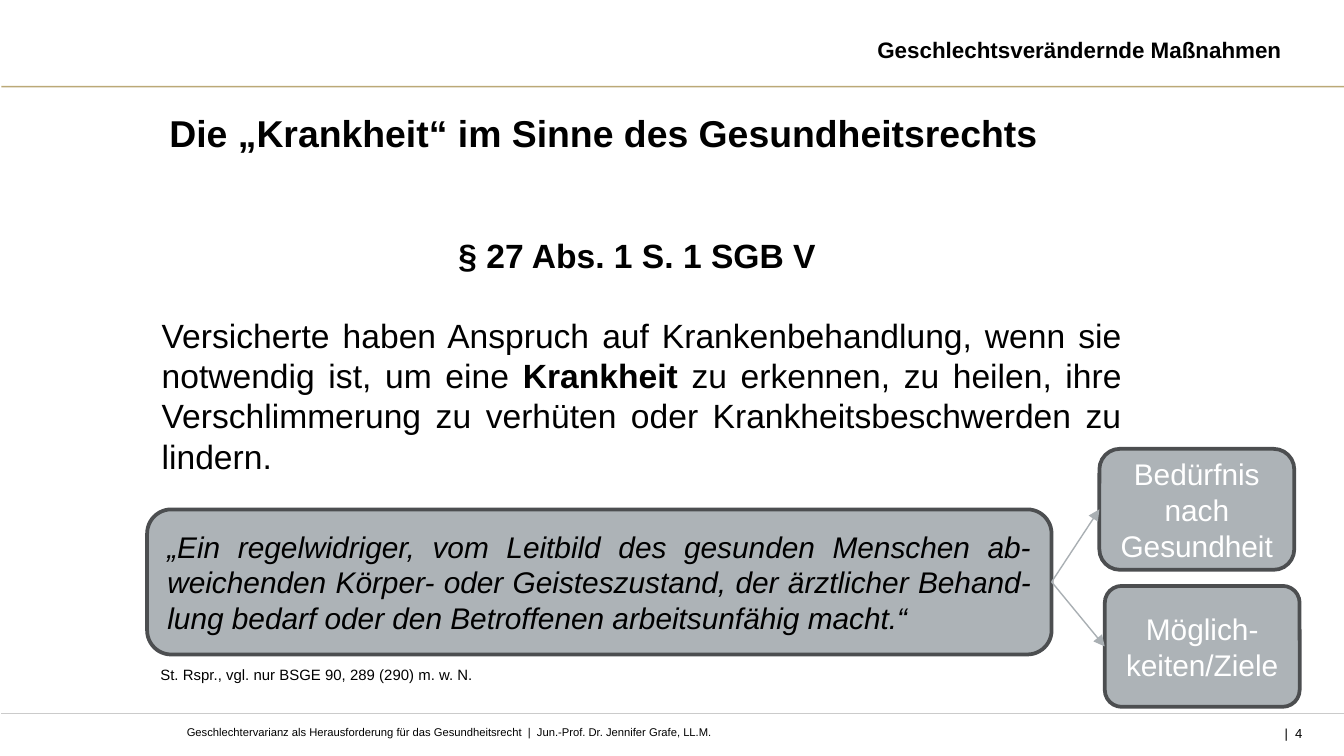
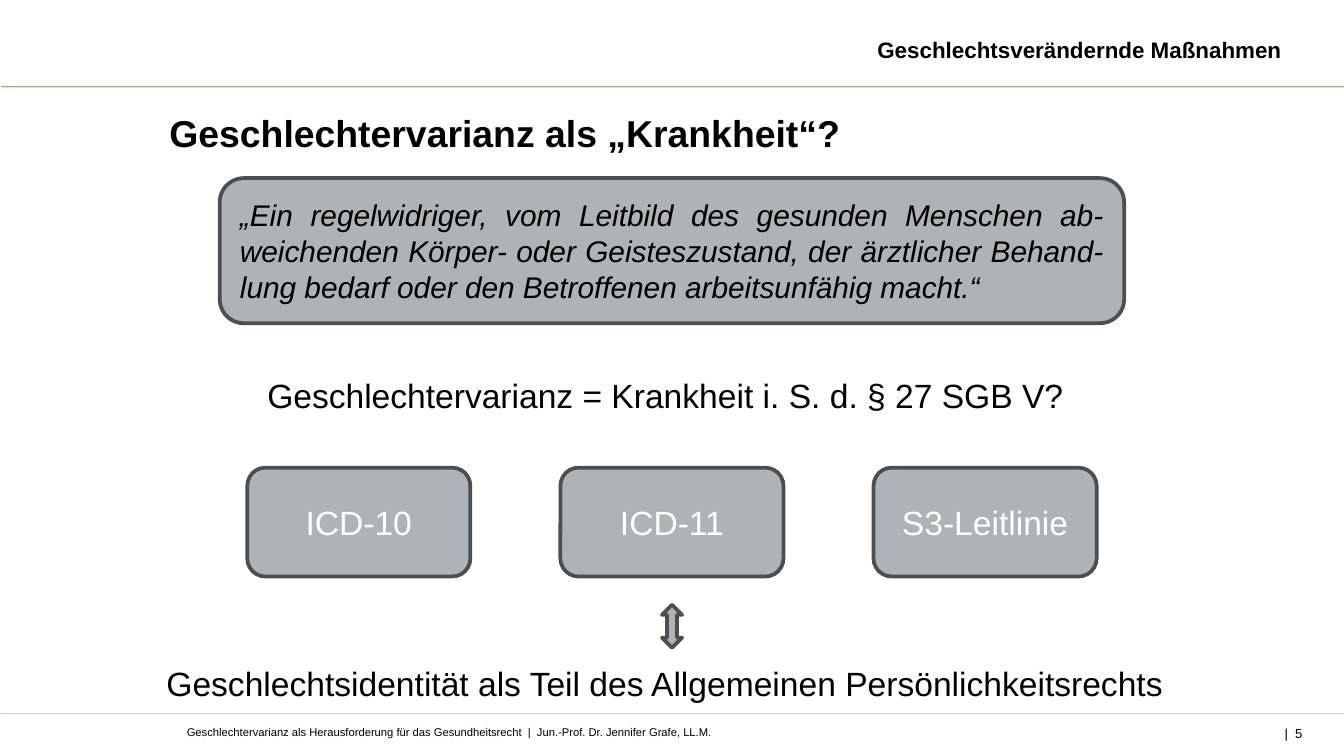
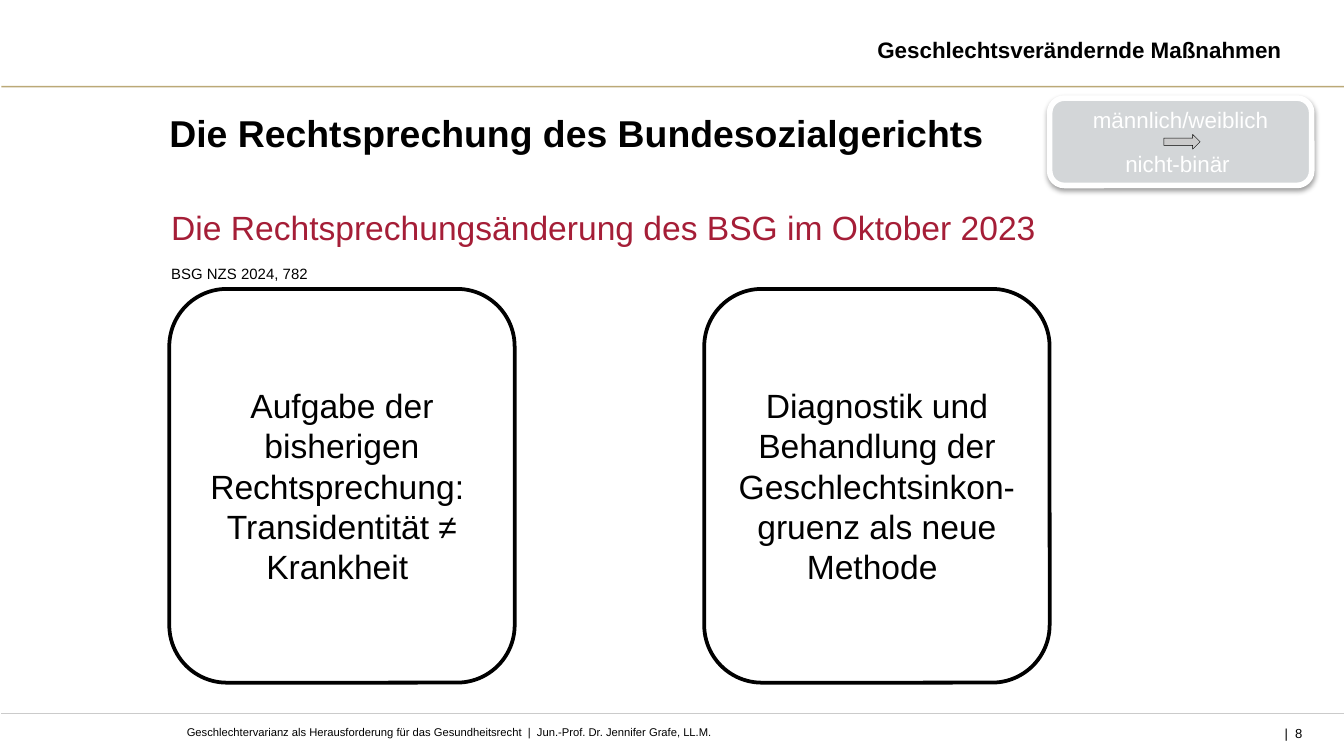
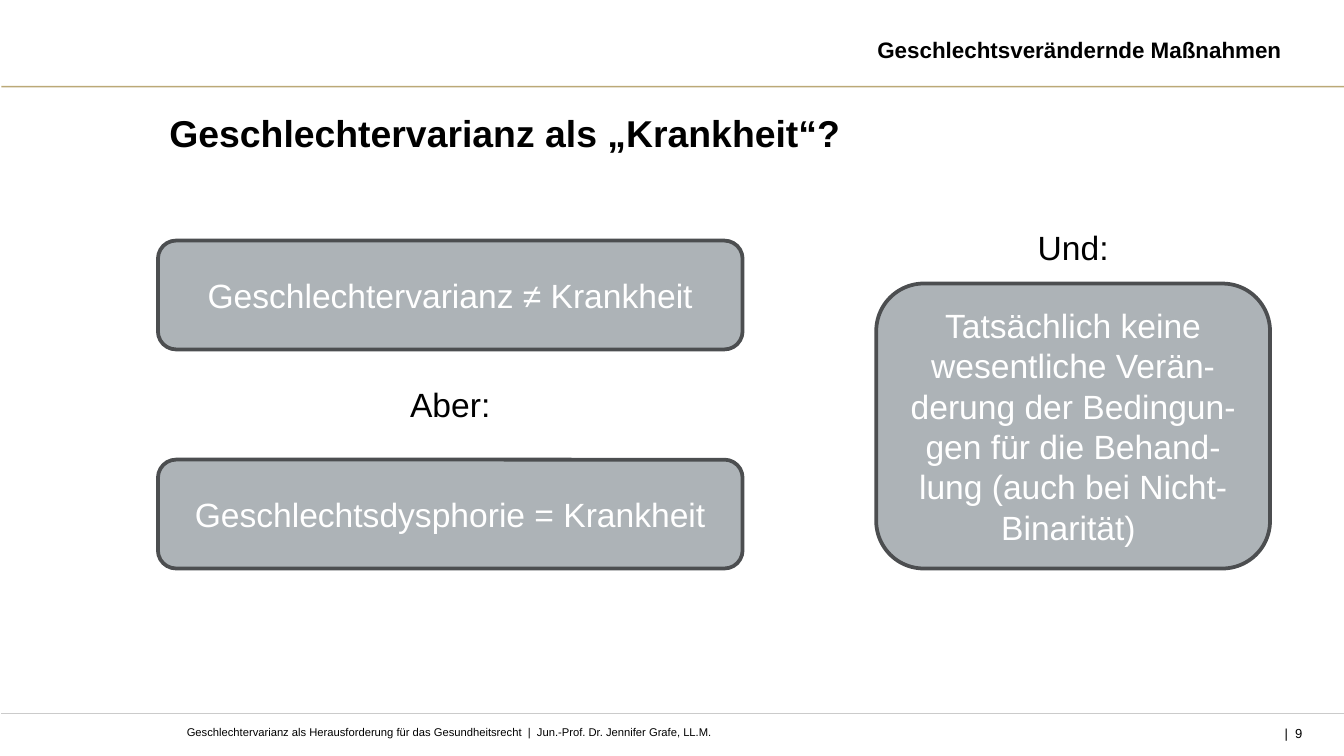
import pptx
import pptx.util
import pptx.dml.color
import pptx.enum.shapes
import pptx.enum.text
import pptx.oxml
import pptx.oxml.ns
from dataclasses import dataclass

SHAPE = pptx.enum.shapes.MSO_SHAPE
ALIGN = pptx.enum.text.PP_ALIGN
ANCHOR = pptx.enum.text.MSO_ANCHOR
WIDTH = 10
HEIGHT = WIDTH * 9 / 16
CELL = WIDTH / 100


@dataclass(frozen=True)
class Theme:
    font: str = "Arial"
    black: str = "000000"
    white: str = "FFFFFF"
    gold: str = "B4A069"
    rule: str = "CBCBCB"
    red: str = "A51E37"
    card: str = "ADB3B7"
    edge: str = "4C4E50"
    pale: str = "D3D6D8"
    arrow: str = "A9AFB3"
    title: int = 20
    body: int = 18
    quote: int = 16
    header: int = 12
    note: int = 8
    page: int = 7
    footer: int = 6
    leading: float = 1.17


T = Theme()

HEADER = "Geschlechtsverändernde Maßnahmen"
FOOTER = "Geschlechtervarianz als Herausforderung für das Gesundheitsrecht  |  Jun.-Prof. Dr. Jennifer Grafe, LL.M."
QUOTE = (
    "„Ein regelwidriger, vom Leitbild des gesunden Menschen ab-weichenden Körper- oder "
    "Geisteszustand, der ärztlicher Behand-lung bedarf oder den Betroffenen arbeitsunfähig macht.“"
)
STATUTE = "§ 27 Abs. 1 S. 1 SGB V "
CLAIM = [
    ("Versicherte haben Anspruch auf Krankenbehandlung, wenn sie notwendig ist, um eine ", False),
    ("Krankheit", True),
    (" zu erkennen, zu heilen, ihre Verschlimmerung zu verhüten oder Krankheitsbeschwerden zu lindern.", False),
]
SOURCE = "St. Rspr., vgl. nur BSGE 90, 289 (290) m. w. N."
NEEDS = [
    ("Bedürfnis nach Gesundheit", (81.8, 33.4), 0.17),
    ("Möglich-keiten/Ziele", (82.2, 43.6), 0.14),
]
QUESTION = "Geschlechtervarianz = Krankheit i. S. d. § 27 SGB V?"
CATALOGUES = ["ICD-10", "ICD-11", "S3-Leitlinie"]
IDENTITY = "Geschlechtsidentität als Teil des Allgemeinen Persönlichkeitsrechts"
GENDERS = ["männlich/weiblich", "nicht-binär "]
RULING = "Die Rechtsprechungsänderung des BSG im Oktober 2023"
CITATION = "BSG NZS 2024, 782"
CHANGES = [
    ["Aufgabe der bisherigen Rechtsprechung: ", "Transidentität ≠ Krankheit "],
    ["Diagnostik und Behandlung der Geschlechtsinkon-gruenz als neue Methode "],
]
EQUATIONS = ["Geschlechtervarianz ≠ Krankheit", "Geschlechtsdysphorie = Krankheit"]
PRACTICE = (
    "Tatsächlich keine wesentliche Verän-derung der Bedingun-gen für die Behand-lung "
    "(auch bei Nicht-Binarität) "
)


def cells(*values):
    return [pptx.util.Inches(v * CELL) for v in values]


def rgb(value):
    return pptx.dml.color.RGBColor.from_string(value)


def para(text, size=T.body, color=T.black, align=ALIGN.LEFT, bold=False, italic=False, before=0, spacing=None):
    return dict(text=text, size=size, color=color, align=align, bold=bold,
                italic=italic, before=before, spacing=spacing)


def write(sp, paras, anchor=ANCHOR.TOP, bare=False):
    tf = sp.text_frame
    tf.word_wrap = True
    tf.vertical_anchor = anchor
    if bare:
        tf.margin_left = tf.margin_right = tf.margin_top = tf.margin_bottom = 0
    for i, item in enumerate(paras):
        p = tf.add_paragraph() if i else tf.paragraphs[0]
        p.alignment = item["align"]
        if item["before"]:
            p.space_before = pptx.util.Pt(item["before"])
        if item["spacing"]:
            p.line_spacing = item["spacing"]
        if isinstance(item["text"], str):
            p.add_run().text = item["text"]
            p.font.bold = item["bold"]
        else:
            for text, bold in item["text"]:
                r = p.add_run()
                r.text, r.font.bold = text, bold
        p.font.name = T.font
        p.font.size = pptx.util.Pt(item["size"])
        p.font.italic = item["italic"]
        p.font.color.rgb = rgb(item["color"])


def textbox(s, box, paras, **options):
    write(s.shapes.add_textbox(*cells(*box)), paras, **options)


def shape(s, box, paras=(), kind=SHAPE.ROUNDED_RECTANGLE, fill=T.card, edge=T.edge, weight=2):
    sp = s.shapes.add_shape(kind, *cells(*box))
    sp.shadow.inherit = False
    sp.fill.solid()
    sp.fill.fore_color.rgb = rgb(fill)
    sp.line.color.rgb = rgb(edge)
    sp.line.width = pptx.util.Pt(weight)
    if paras:
        write(sp, paras, anchor=ANCHOR.MIDDLE)
    return sp


def card(s, box, text, size=T.body):
    return shape(s, box, [para(text, size, T.white, ALIGN.CENTER)])


def quote(s, x, y):
    return shape(s, (x, y, 67.3, 10.8), [para(QUOTE, T.quote, align=ALIGN.JUSTIFY, italic=True)])


def add_xml(parent, tag, **attributes):
    child = parent.makeelement(pptx.oxml.ns.qn(tag), attributes)
    parent.append(child)
    return child


def line(s, start, end, color):
    c = s.shapes.add_connector(pptx.enum.shapes.MSO_CONNECTOR.STRAIGHT, *cells(*start, *end))
    c.line.color.rgb = rgb(color)
    c.line.width = pptx.util.Pt(0.75)
    add_xml(c._element.spPr, "a:effectLst")
    return c


def cast_shadow(sp):
    effects = sp._element.spPr.find(pptx.oxml.ns.qn("a:effectLst"))
    shadow = add_xml(effects, "a:outerShdw", blurRad=str(pptx.util.Pt(3.1)),
                     dist=str(pptx.util.Pt(1.6)), dir="5400000", rotWithShape="0")
    add_xml(add_xml(shadow, "a:srgbClr", val=T.black), "a:alpha", val="38000")


def new_slide(prs, title, number):
    s = prs.slides.add_slide(prs.slide_layouts[6])
    top = line(s, (0.1, 6.45), (100.1, 6.45), T.gold)
    add_xml(top.line._ln.find(".//" + pptx.oxml.ns.qn("a:srgbClr")), "a:alpha", val="90000")
    line(s, (0.1, 53.1), (100.1, 53.1), T.rule)
    textbox(s, (87.7, 54, 9.2, 2.2), [para(f" |  {number}", T.page, align=ALIGN.RIGHT)], bare=True)
    textbox(s, (13.9, 54, 78.7, 1), [para(FOOTER, T.footer)], bare=True)
    textbox(s, (64.3, 2.2, 36.7, 3), [para(HEADER, T.header, bold=True)])
    textbox(s, (12.6, 4.5, 83.1, 7), [para(title, T.title, bold=True, spacing=1.05)],
            anchor=ANCHOR.BOTTOM, bare=True)
    return s


def illness(s):
    textbox(s, (11.05, 17, 73.4, 19.2), [
        para(STATUTE, align=ALIGN.CENTER, bold=True),
        para(CLAIM, align=ALIGN.JUSTIFY, before=T.body * T.leading),
    ])
    definition = quote(s, 10.95, 37.9)
    for text, corner, rounding in NEEDS:
        need = card(s, (*corner, 14.5, 9), text, T.quote)
        need.adjustments[0] = rounding
        c = line(s, (0, 0), (1, 1), T.arrow)
        c.begin_connect(definition, 3)
        c.end_connect(need, 1)
        add_xml(c.line._ln, "a:tailEnd", type="triangle")
    textbox(s, (10.95, 49.05, 67.2, 5.4), [para(SOURCE, T.note)])


def variance(s):
    quote(s, 16.35, 13.25)
    textbox(s, (18.9, 27.4, 62.2, 4), [para(QUESTION)])
    for i, text in enumerate(CATALOGUES):
        card(s, (18.4 + i * 23.3, 34.8, 16.6, 8.1), text)
    shape(s, (49.25, 45, 1.5, 3.2), kind=SHAPE.UP_DOWN_ARROW)
    textbox(s, (11.4, 48.85, 77.2, 4), [para(IDENTITY)])


def court(s):
    gap = T.note * T.leading
    badge = shape(s, (78.1, 7.3, 19.5, 6.5), [
        para(text, T.header, T.white, ALIGN.CENTER, before=i * gap) for i, text in enumerate(GENDERS)
    ], fill=T.pale, edge=T.white, weight=3)
    cast_shadow(badge)
    textbox(s, (11.75, 14.9, 77.5, 13.1), [
        para(RULING, color=T.red),
        para(CITATION, T.note, before=gap),
    ])
    shape(s, (86.6, 10, 2.7, 1.1), kind=SHAPE.RIGHT_ARROW, fill=T.rule, edge=T.black, weight=0.25)
    for i, texts in enumerate(CHANGES):
        shape(s, (12.6 + i * 39.8, 21.5, 25.7, 29.3),
              [para(text, align=ALIGN.CENTER) for text in texts], fill=T.white, edge=T.black)


def outcome(s):
    left, right = (11.75, 43.5), (65.2, 29.3)
    for i, text in enumerate(EQUATIONS):
        card(s, (left[0], 17.9 + i * 16.3, left[1], 8.1), text)
    for text, (x, w), width, y in [("Aber:", left, 8.1, 28.1), ("Und:", right, 7.3, 16.4)]:
        textbox(s, (x + (w - width) / 2, y, width, 4), [para(text, align=ALIGN.CENTER)])
    card(s, (right[0], 21.1, right[1], 21.2), PRACTICE)


SLIDES = [
    (4, "Die „Krankheit“ im Sinne des Gesundheitsrechts", illness),
    (5, "Geschlechtervarianz als „Krankheit“?", variance),
    (8, "Die Rechtsprechung des Bundesozialgerichts", court),
    (9, "Geschlechtervarianz als „Krankheit“?", outcome),
]


def main():
    prs = pptx.Presentation()
    prs.slide_width = pptx.util.Inches(WIDTH)
    prs.slide_height = pptx.util.Inches(HEIGHT)
    for number, title, fill_in in SLIDES:
        fill_in(new_slide(prs, title, number))
    prs.save("out.pptx")


if __name__ == "__main__":
    main()
